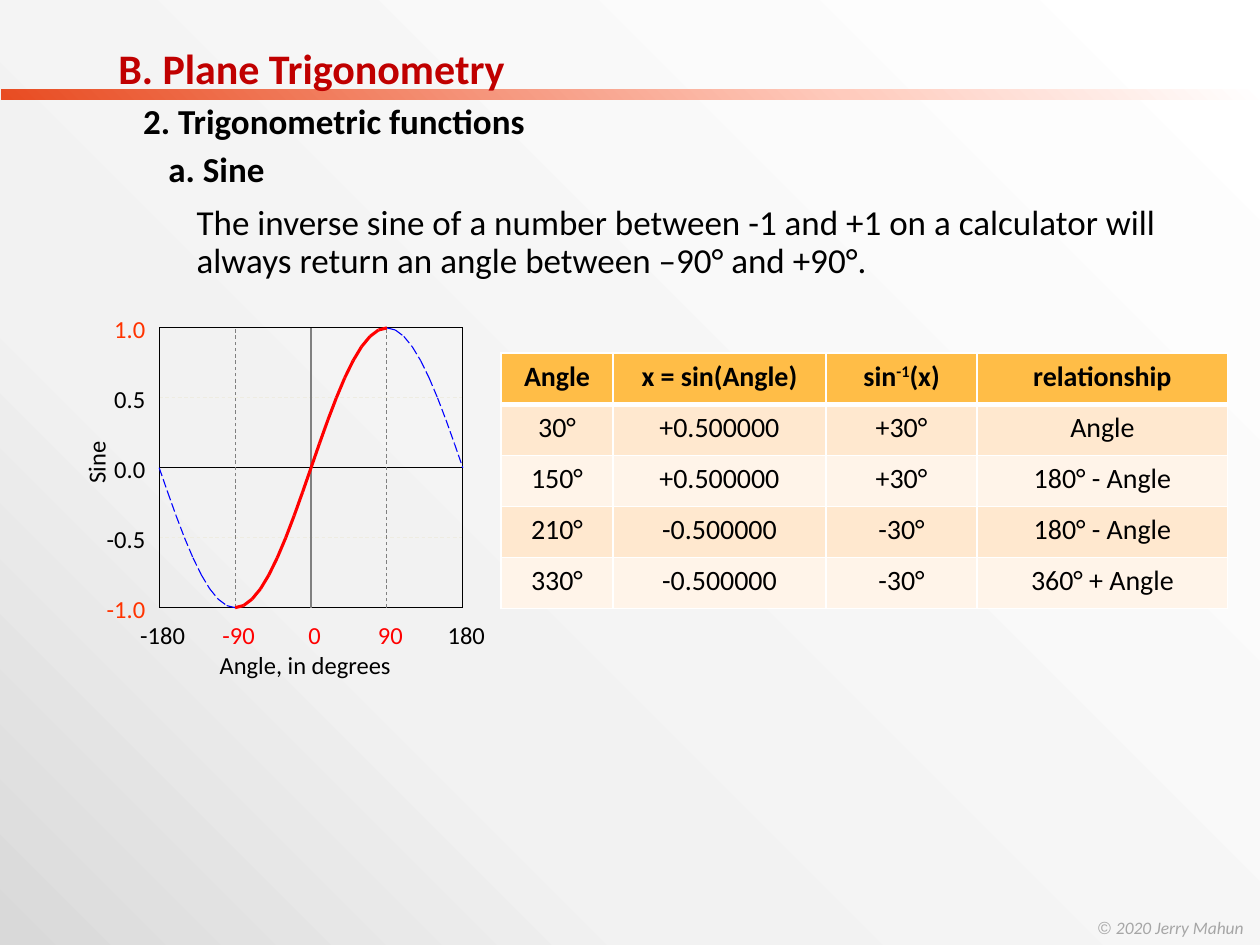
"""Build the slide on the inverse sine, with its sine curve and its table of angles."""
import math

from lxml import etree
from pptx import Presentation
from pptx.dml.color import RGBColor
from pptx.enum.dml import MSO_LINE
from pptx.enum.shapes import MSO_CONNECTOR, MSO_SHAPE
from pptx.enum.text import MSO_ANCHOR, MSO_AUTO_SIZE, PP_ALIGN
from pptx.oxml.ns import qn
from pptx.util import Cm, Pt

DASH, LONG_DASH, SOLID = MSO_LINE.DASH, MSO_LINE.LONG_DASH, MSO_LINE.SOLID
LEFT, CENTER, RIGHT = PP_ALIGN.LEFT, PP_ALIGN.CENTER, PP_ALIGN.RIGHT
STRAIGHT, RECTANGLE = MSO_CONNECTOR.STRAIGHT, MSO_SHAPE.RECTANGLE
TOP, NO_AUTOFIT = MSO_ANCHOR.TOP, MSO_AUTO_SIZE.NONE

COLORS = {
    "black": "000000", "white": "FFFFFF", "heading": "C00000", "credit": "A6A6A6",
    "limit": "FF3300", "red": "FF0000", "blue": "0000FF", "gray": "808080",
    "grid": "EEECE1", "header": "FFBD47", "odd row": "FFE8CF", "even row": "FFF4E9",
    "paper": "F2F2F2", "shade": "D9D9D9", "pale bar": "FFCBBD", "bar": "E84C22",
}


def add_span(para, text, size, color="black", bold=False, font="Calibri"):
    span = para.add_run()
    span.text = text
    span.font.name = font
    span.font.size = Pt(size)
    span.font.bold = bold
    span.font.color.rgb = RGBColor.from_string(COLORS[color])
    return span


deck = Presentation()
deck.slide_width, deck.slide_height = Cm(25.4), Cm(19.05)
page = deck.slides.add_slide(deck.slide_layouts[3])
title, headings, statement = page.placeholders

bar = page.shapes.add_shape(RECTANGLE, Cm(0.03), Cm(1.8), Cm(25.37), Cm(0.2))
bar.shadow.inherit = False
bar.line.fill.background()
title.element.addprevious(bar.element)

gradients = [
    (page.background.fill, page.element, [(0, "white"), (70, "paper"), (100, "shade")]),
    (bar.fill, bar.element, [(0, "white"), (33, "pale bar"), (100, "bar")]),
]
for fill, element, stops in gradients:
    fill.gradient()
    fill.gradient_angle = 225
    stop_list = element.find(".//" + qn("a:gsLst"))
    for old_stop in list(stop_list):
        stop_list.remove(old_stop)
    for position, color in stops:
        stop = etree.SubElement(stop_list, qn("a:gs"), pos=str(position * 1000))
        etree.SubElement(stop, qn("a:srgbClr"), val=COLORS[color])

text_blocks = [
    (title, (2.13, 0.72, 12.22, 1.2), 1,
     [("B. Plane Trigonometry", 0, 24, "heading", True)]),
    (headings, (2.12, 1.88, 12.22, 1.9), 1,
     [("2. Trigonometric functions", 0.51, 20, "black", True),
      ("a. Sine", 1.02, 20, "black", True)]),
    (statement, (2.24, 4.01, 22.68, 13.67), 0.9,
     [("The inverse sine of a number between -1 and +1 on a calculator will "
       "always return an angle between –90° and +90°.", 1.47, 20, "black", False)]),
]
for holder, place, spacing, lines in text_blocks:
    holder.left, holder.top, holder.width, holder.height = map(Cm, place)
    frame = holder.text_frame
    frame.word_wrap = True
    frame.auto_size = NO_AUTOFIT
    frame.vertical_anchor = TOP
    for number, (text, indent, size, color, bold) in enumerate(lines):
        para = frame.add_paragraph() if number else frame.paragraphs[0]
        para.alignment = LEFT
        para.line_spacing = spacing
        para.space_before = Pt(3.5)
        properties = para._p.get_or_add_pPr()
        properties.set("marL", str(Cm(indent)))
        properties.set("indent", "0")
        etree.SubElement(properties, qn("a:buNone"))
        add_span(para, text, size, color, bold)

ZERO_X, ZERO_Y = 6.27, 9.43
PER_DEGREE, PER_UNIT = 0.017, 2.82
left_x, right_x = ZERO_X - 180 * PER_DEGREE, ZERO_X + 180 * PER_DEGREE
top_y, bottom_y = ZERO_Y - PER_UNIT, ZERO_Y + PER_UNIT
plot = page.shapes.add_group_shape()

labels = [
    ("Sine", 1.47, 9.02, 0.94, CENTER, "black", 270),
    ("Angle, in degrees", 4.35, 13.11, 3.61, CENTER, "black", 0),
]
rules = []
for value in (-1, -0.5, 0, 0.5, 1):
    y = ZERO_Y - value * PER_UNIT
    line_style = ("grid", 0.5, DASH) if abs(value) == 0.5 else ("black", 0.63, SOLID)
    rules.append((left_x, y, right_x, y, line_style))
    color = "limit" if abs(value) == 1 else "black"
    labels.append((f"{value:.1f}", 2.09, y - 0.27, 0.84, RIGHT, color, 0))
for angle in range(-180, 181, 90):
    x = ZERO_X + angle * PER_DEGREE
    line_style = {0: ("gray", 0.63, SOLID), 90: ("gray", 0.5, DASH),
                  180: ("black", 0.63, SOLID)}[abs(angle)]
    rules.append((x, bottom_y, x, top_y, line_style))
    color = "black" if abs(angle) == 180 else "red"
    labels.append((str(angle), x - 0.43, 12.5, 1, CENTER, color, 0))

curve = [(angle, ZERO_X + angle * PER_DEGREE,
          ZERO_Y - PER_UNIT * math.sin(math.radians(angle)))
         for angle in range(-180, 181, 10)]
for (angle, x1, y1), (_, x2, y2) in zip(curve, curve[1:]):
    in_range = -90 <= angle < 90
    line_style = ("red", 1.75, SOLID) if in_range else ("blue", 0.63, LONG_DASH)
    rules.append((x1, y1, x2, y2, line_style))

for x1, y1, x2, y2, (color, width, dash) in rules:
    rule = plot.shapes.add_connector(STRAIGHT, Cm(x1), Cm(y1), Cm(x2), Cm(y2))
    rule.line.color.rgb = RGBColor.from_string(COLORS[color])
    rule.line.width = Pt(width)
    rule.line.dash_style = dash
    etree.SubElement(rule.element.spPr, qn("a:effectLst"))

for text, left, top, width, alignment, color, rotation in labels:
    box = plot.shapes.add_textbox(Cm(left), Cm(top), Cm(width), Cm(0.61))
    box.rotation = rotation
    frame = box.text_frame
    frame.word_wrap = False
    frame.margin_left = frame.margin_right = frame.margin_top = frame.margin_bottom = 0
    frame.paragraphs[0].alignment = alignment
    add_span(frame.paragraphs[0], text, 14, color)

rows = [
    ("Angle", "x = sin(Angle)", "sin|-1|(x)", "relationship"),
    ("30°", "+0.500000", "+30°", "Angle"),
    ("150°", "+0.500000", "+30°", "180° - Angle"),
    ("210°", "-0.500000", "-30°", "180° - Angle"),
    ("330°", "-0.500000", "-30°", "360° + Angle"),
]
column_widths = (2.26, 4.29, 3.05, 5.05)
table = page.shapes.add_table(len(rows), len(column_widths), Cm(10.1), Cm(7.12),
                              Cm(sum(column_widths)), Cm(5.15)).table
for column, width in zip(table.columns, column_widths):
    column.width = Cm(width)
for row_number, texts in enumerate(rows):
    table.rows[row_number].height = Cm(1.03)
    is_header = row_number == 0
    fill_color = "header" if is_header else ("even row", "odd row")[row_number % 2]
    edges = {"lnL": 1, "lnR": 1, "lnT": 3 if row_number == 1 else 1, "lnB": 3 if is_header else 1}
    for column_number, text in enumerate(texts):
        cell = table.cell(row_number, column_number)
        properties = cell._tc.get_or_add_tcPr()
        for edge, width in edges.items():
            border = etree.SubElement(properties, qn(f"a:{edge}"), w=str(Pt(width)))
            paint = etree.SubElement(border, qn("a:solidFill"))
            etree.SubElement(paint, qn("a:srgbClr"), val=COLORS["white"])
        cell.fill.solid()
        cell.fill.fore_color.rgb = RGBColor.from_string(COLORS[fill_color])
        para = cell.text_frame.paragraphs[0]
        para.alignment = CENTER
        for part_number, part in enumerate(text.split("|")):
            span = add_span(para, part, 16, bold=is_header)
            if part_number == 1:
                span._r.get_or_add_rPr().set("baseline", "30000")

credit = page.shapes.add_textbox(Cm(21.89), Cm(18.36), Cm(3.5), Cm(0.69))
credit.text_frame.word_wrap = False
para = credit.text_frame.paragraphs[0]
add_span(para, "© ", 10, "credit", font="Arial")
add_span(para, "2020 Jerry Mahun", 10, "credit").font.italic = True

deck.save("out.pptx")
